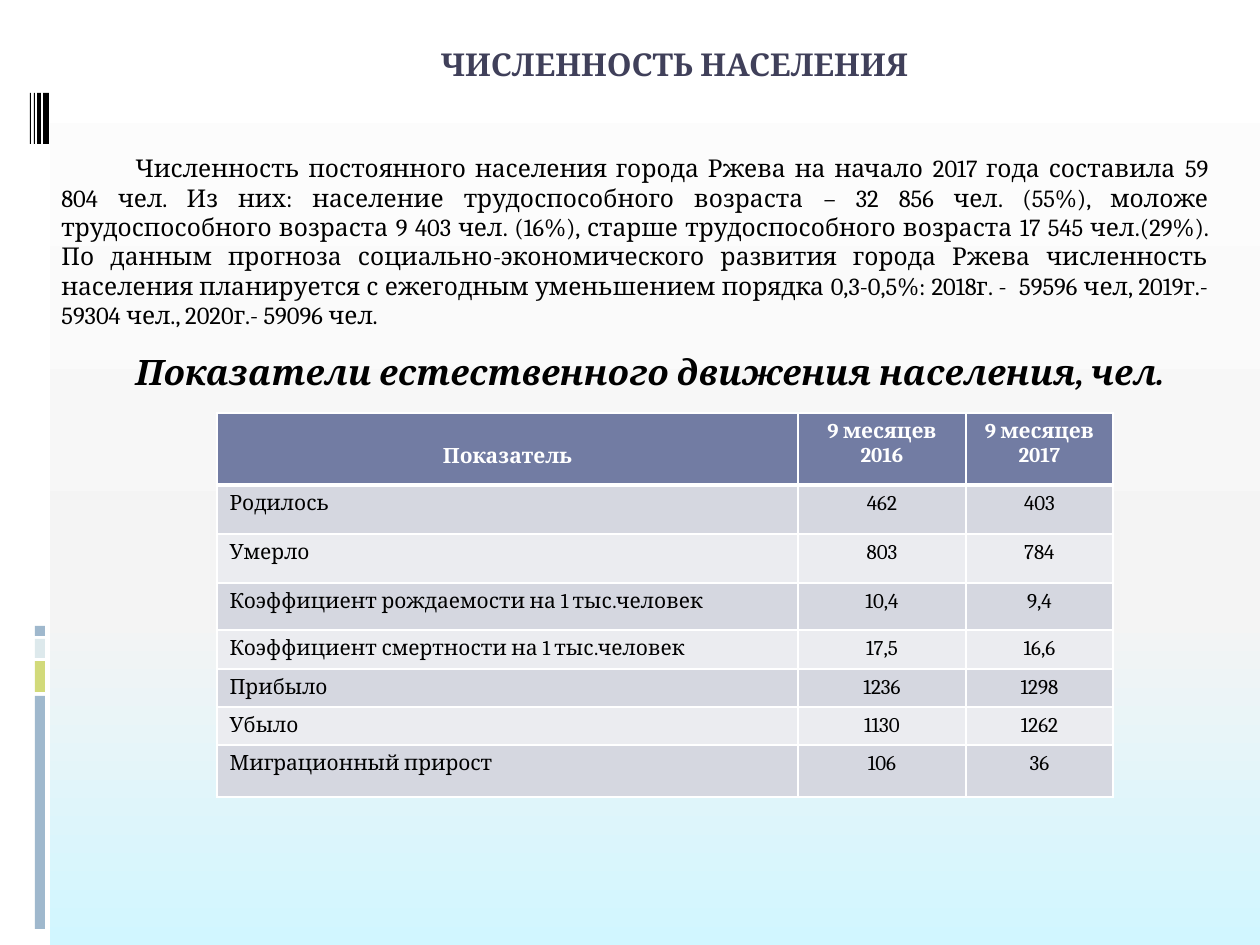
"""Build the population slide with its table of natural movement."""
import copy

import pptx
import pptx.dml.color
import pptx.enum.shapes
import pptx.enum.text
import pptx.oxml.ns
import pptx.oxml.xmlchemy
import pptx.util
from lxml import etree

ALIGN = pptx.enum.text.PP_ALIGN
ANCHOR = pptx.enum.text.MSO_ANCHOR
FIT = pptx.enum.text.MSO_AUTO_SIZE
qn = pptx.oxml.ns.qn

TITLE = "ЧИСЛЕННОСТЬ НАСЕЛЕНИЯ"
BODY = (
    "Численность постоянного населения города Ржева на начало 2017 года составила 59 804 чел. "
    "Из них: население трудоспособного возраста – 32 856 чел. (55%), моложе трудоспособного "
    "возраста 9 403 чел. (16%), старше трудоспособного возраста 17 545 чел.(29%). По данным "
    "прогноза социально-экономического развития города Ржева численность населения планируется "
    "с ежегодным уменьшением порядка 0,3-0,5%: 2018г. -  59596 чел, 2019г.- 59304 чел., "
    "2020г.- 59096 чел."
)
SUBTITLE = "Показатели естественного движения населения, чел."
ROWS = [
    ("Показатель", "9 месяцев 2016", "9 месяцев 2017"),
    ("Родилось", "462", "403"),
    ("Умерло", "803", "784"),
    ("Коэффициент рождаемости на 1 тыс.человек", "10,4", "9,4"),
    ("Коэффициент смертности на 1 тыс.человек", "17,5", "16,6"),
    ("Прибыло", "1236", "1298"),
    ("Убыло", "1130", "1262"),
    ("Миграционный прирост", "106", "36"),
]

THEME = {
    "font": "Cambria",
    "background": [(0, "FFFFFF"), (0.65, "F4F4F4"), (1, "D1F6FF")],
    "white": "FFFFFF", "black": "000000",
    "blue": "9FB8CD", "green": "D2DA7A", "pale": "DDE9EC",
    "header": "727CA3", "bands": ["D5D7E0", "EBECF0"],
    "title": {"size": 18, "color": "40405A", "bold": True, "italic": False},
    "body": {"size": 14, "color": "000000", "bold": False, "italic": False},
    "subtitle": {"size": 20, "color": "000000", "bold": True, "italic": True},
    "head_cell": {"size": 12, "color": "FFFFFF", "bold": True, "italic": False},
    "cell": {"size": 12, "color": "000000", "bold": False, "italic": False},
}

SLIDE = (1260, 945)
SIDE_PANEL = (0, 0, 50, 945)
BAR_TOP, BAR_HEIGHT = 93, 51
BARS = [(43, 6), (37, 4), (34, 1), (30, 1)]
BLOCK_LEFT, BLOCK_WIDTH = 35, 10
BLOCKS = [(696, 233, "blue"), (661, 31, "green"), (639, 19, "pale"), (626, 10, "blue")]
TITLE_BOX = (207, 39, 935, 88)
BODY_BOX = (49, 147, 1172, 220)
BODY_INDENT = 74
SUBTITLE_BOX = (88, 344, 1123, 55)
TABLE_ORIGIN = (217, 413)
COLUMNS = [581, 168, 147]
HEIGHTS = [72, 49, 49, 47, 39, 38, 38, 52]
HEADER_GAP = 16


def px(value):
    return pptx.util.Emu(round(value * 914400 / 126))


def rgb(value):
    return pptx.dml.color.RGBColor.from_string(value)


def write(frame, text, style, alignment):
    paragraph = frame.paragraphs[0]
    paragraph.alignment = alignment
    run = paragraph.add_run()
    run.text = text
    formats = {"name": THEME["font"], "size": pptx.util.Pt(style["size"]),
               "bold": style["bold"], "italic": style["italic"]}
    for name, value in formats.items():
        setattr(run.font, name, value)
    run.font.color.rgb = rgb(style["color"])
    return paragraph


def set_frame(frame, auto_size):
    formats = {"word_wrap": True, "auto_size": auto_size, "vertical_anchor": ANCHOR.TOP}
    for name, value in formats.items():
        setattr(frame, name, value)


def paint_background(slide):
    fill = slide.background.fill
    fill.gradient()
    fill.gradient_angle = 270
    stops = slide.element.find(".//" + qn("a:gsLst"))
    stops.append(copy.deepcopy(stops[-1]))
    for stop, (position, color) in zip(fill.gradient_stops, THEME["background"]):
        stop.position = position
        stop.color.rgb = rgb(color)


def add_rectangle(slide, box, color):
    kind = pptx.enum.shapes.MSO_SHAPE.RECTANGLE
    shape = slide.shapes.add_shape(kind, *map(px, box))
    shape.shadow.inherit = False
    shape.fill.solid()
    shape.fill.fore_color.rgb = rgb(color)
    shape.line.fill.background()


def add_decoration(slide):
    add_rectangle(slide, SIDE_PANEL, THEME["white"])
    for left, width in BARS:
        add_rectangle(slide, (left, BAR_TOP, width, BAR_HEIGHT), THEME["black"])
    for top, height, color in BLOCKS:
        add_rectangle(slide, (BLOCK_LEFT, top, BLOCK_WIDTH, height), THEME[color])


def add_title(slide):
    title = slide.shapes.title
    for name, value in zip(("left", "top", "width", "height"), TITLE_BOX):
        setattr(title, name, px(value))
    set_frame(title.text_frame, FIT.NONE)
    write(title.text_frame, TITLE, THEME["title"], ALIGN.CENTER)


def add_text(slide, box, text, style, alignment):
    frame = slide.shapes.add_textbox(*map(px, box)).text_frame
    set_frame(frame, FIT.SHAPE_TO_FIT_TEXT)
    return write(frame, text, style, alignment)


def add_borders(cell, bottom_width):
    properties = cell._tc.get_or_add_tcPr()
    for side, width in (("L", 1), ("R", 1), ("T", 1), ("B", bottom_width)):
        line = etree.SubElement(properties, qn("a:ln" + side), w=str(pptx.util.Pt(width)))
        fill = etree.SubElement(line, qn("a:solidFill"))
        etree.SubElement(fill, qn("a:srgbClr"), val=THEME["white"])


def add_table(slide):
    size = (sum(COLUMNS), sum(HEIGHTS))
    table = slide.shapes.add_table(
        len(ROWS), len(COLUMNS), *map(px, TABLE_ORIGIN + size)).table
    for column, width in zip(table.columns, COLUMNS):
        column.width = px(width)
    for row_index, (row, height) in enumerate(zip(ROWS, HEIGHTS)):
        table.rows[row_index].height = px(height)
        is_header = row_index == 0
        color = THEME["header"] if is_header else THEME["bands"][(row_index - 1) % 2]
        style = THEME["head_cell" if is_header else "cell"]
        for column_index, text in enumerate(row):
            cell = table.cell(row_index, column_index)
            add_borders(cell, 3 if is_header else 1)
            cell.fill.solid()
            cell.fill.fore_color.rgb = rgb(color)
            centred = is_header or column_index > 0
            write(cell.text_frame, text, style, ALIGN.CENTER if centred else ALIGN.LEFT)
    corner = table.cell(0, 0)
    corner.vertical_anchor = ANCHOR.BOTTOM
    corner.margin_bottom = px(HEADER_GAP)


def main():
    presentation = pptx.Presentation()
    presentation.slide_width, presentation.slide_height = map(px, SLIDE)
    slide = presentation.slides.add_slide(presentation.slide_layouts[5])
    paint_background(slide)
    add_decoration(slide)
    add_title(slide)
    body = add_text(slide, BODY_BOX, BODY, THEME["body"], ALIGN.JUSTIFY)
    body._p.get_or_add_pPr().set("indent", str(px(BODY_INDENT)))
    add_text(slide, SUBTITLE_BOX, SUBTITLE, THEME["subtitle"], ALIGN.CENTER)
    add_table(slide)
    presentation.save("out.pptx")


if __name__ == "__main__":
    main()
